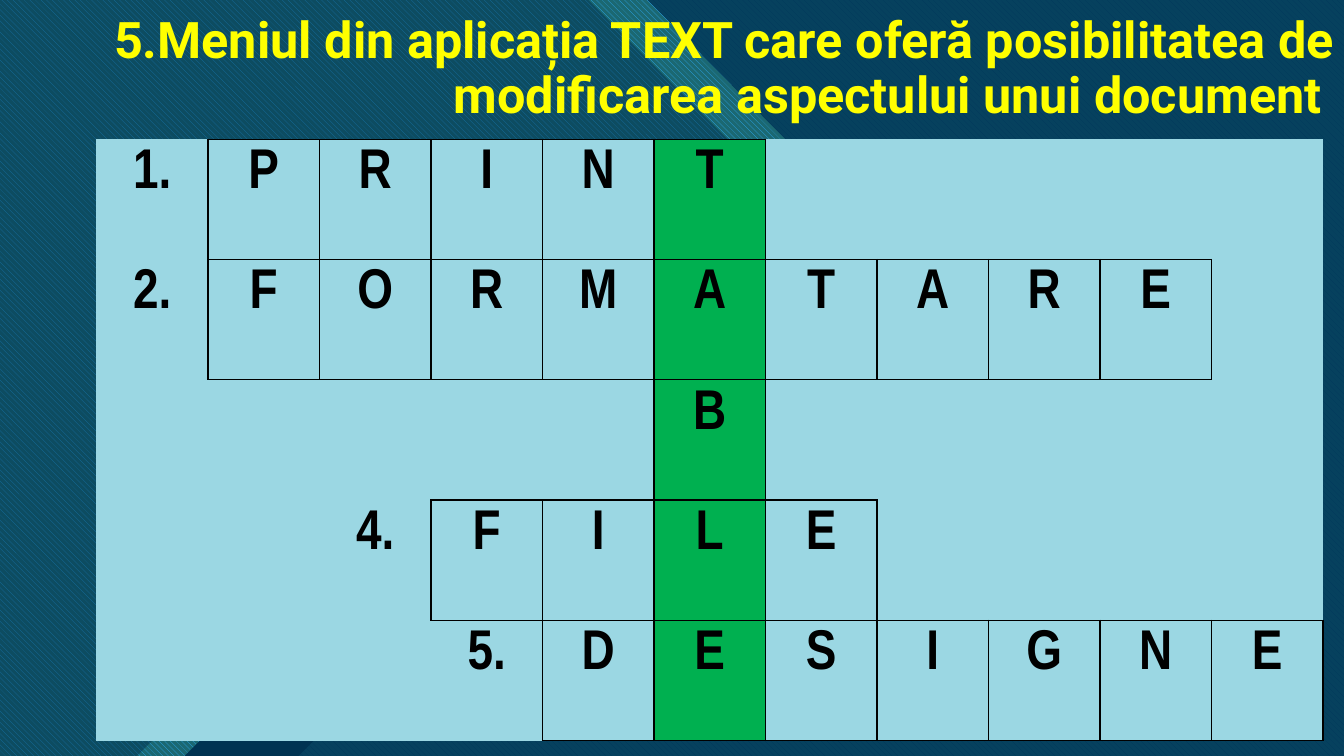
from lxml.etree import SubElement
from pptx import Presentation
from pptx.dml.color import RGBColor
from pptx.enum.dml import MSO_PATTERN as Pat
from pptx.enum.text import MSO_ANCHOR as Anchor, MSO_AUTO_SIZE as Fit, PP_ALIGN as Align
from pptx.oxml.ns import qn
from pptx.util import Cm, Pt

TITLE = "5.Meniul din aplicația TEXT care oferă posibilitatea de modificarea aspectului unui document "
WORDS = [("1.", 0, "PRINT"), ("2.", 0, "FORMATARE"), ("", 4, "B"), ("4.", 2, "FILE"), ("5.", 3, "DESIGNE")]
COLS, KEY = 11, 5
WIDE, HIGH = 33.87, 19.05
LEFT, TOP, COL, ROW = 2.43, 3.51, 2.81, 3.03

BLACK = RGBColor(0x00, 0x00, 0x00)
YELLOW = RGBColor(0xFF, 0xFF, 0x00)
GREEN = RGBColor(0x00, 0xB0, 0x50)
PALE = RGBColor(0x9B, 0xD7, 0xE3)
NAVY = RGBColor(0x00, 0x33, 0x52)
BLUE = RGBColor(0x00, 0x65, 0xA4)
AQUA = RGBColor(0x47, 0xC3, 0xD3)
SKY = RGBColor(0x2F, 0xAF, 0xFF)
TEAL = RGBColor(0x1B, 0x68, 0x72)

FULL = [(0, 0), (WIDE, 0), (WIDE, HIGH), (0, HIGH)]
LAYERS = [
    (FULL, (BLUE, AQUA), 100),
    (FULL, NAVY, 90),
    ([(0.53, 2.29), (16.87, 2.29), (20.57, 5.99), (7.52, HIGH), (0.53, HIGH)], NAVY, 100),
    ([(0, 0), (16.31, 0), (19.99, 3.71), (4.65, HIGH), (0, HIGH)], (SKY, TEAL), 100),
    ([(0, 0), (14.83, 0), (18.67, 3.84), (3.45, HIGH), (0, HIGH)], NAVY, 51),
]


def write(frame, text, size=40, font="Arial Narrow", color=BLACK, align=Align.CENTER, space=1.07):
    """Put one bold formatted paragraph into a text frame."""
    par = frame.paragraphs[0]
    par.alignment, par.line_spacing = align, space
    run = par.add_run()
    run.text = text
    run.font.size, run.font.name, run.font.bold = Pt(size), font, True
    run.font.color.rgb = color


def layer(shapes, points, paint, alpha):
    """Draw one background outline, patterned for a pair of colours."""
    start, *rest = [(Cm(x), Cm(y)) for x, y in points]
    form = shapes.build_freeform(*start)
    form.add_line_segments(rest, close=True)
    shape = form.convert_to_shape()
    shape.shadow.inherit = False
    shape.line.fill.background()
    fill = shape.fill
    if isinstance(paint, RGBColor):
        fill.solid()
        fill.fore_color.rgb = paint
        tint = next(shape.element.spPr.iter(qn("a:srgbClr")))
        SubElement(tint, qn("a:alpha"), val=str(alpha * 1000))
    else:
        fill.patterned()
        fill.pattern = Pat.WIDE_DOWNWARD_DIAGONAL
        fill.fore_color.rgb, fill.back_color.rgb = paint


def border(cell, side, shown):
    """Show or hide one side of a cell."""
    line = SubElement(cell.get_or_add_tcPr(), qn("a:ln" + side), w=str(Pt(1)))
    if shown:
        fill = SubElement(line, qn("a:solidFill"))
        SubElement(fill, qn("a:srgbClr"), val=str(BLACK))
    else:
        SubElement(line, qn("a:noFill"))


def puzzle(shapes):
    """Build the crossword table."""
    rows = len(WORDS)
    table = shapes.add_table(rows, COLS, Cm(LEFT), Cm(TOP), Cm(COL * COLS), Cm(ROW * rows)).table
    table.first_row = table.horz_banding = False
    for col in table.columns:
        col.width = Cm(COL)
    for row in table.rows:
        row.height = Cm(ROW)
    text = {}
    for r, (mark, c, word) in enumerate(WORDS):
        text[r, c] = mark
        text.update({(r, c + i): letter for i, letter in enumerate(word, 1)})
    boxed = {spot for spot, sign in text.items() if sign.isalpha()}
    sides = {"L": (0, -1), "R": (0, 1), "T": (-1, 0), "B": (1, 0)}
    for r in range(rows):
        for c in range(COLS):
            cell = table.cell(r, c)
            for side, (down, over) in sides.items():
                border(cell._tc, side, bool({(r, c), (r + down, c + over)} & boxed))
            cell.fill.solid()
            cell.fill.fore_color.rgb = GREEN if c == KEY else PALE
            cell.margin_left = cell.margin_right = Cm(0.18)
            cell.margin_top = cell.margin_bottom = Cm(0.13)
            if text.get((r, c)):
                write(cell.text_frame, text[r, c])


def main():
    """Build the slide and save it."""
    deck = Presentation()
    deck.slide_width, deck.slide_height = Cm(WIDE), Cm(HIGH)
    shapes = deck.slides.add_slide(deck.slide_layouts[5]).shapes
    for points, paint, alpha in LAYERS:
        layer(shapes, points, paint, alpha)
    puzzle(shapes)
    title = shapes.title
    title.left, title.top, title.width, title.height = Cm(1.02), Cm(0), Cm(32.87), Cm(3.51)
    frame = title.text_frame
    frame.word_wrap, frame.auto_size = True, Fit.NONE
    frame.vertical_anchor = Anchor.MIDDLE
    write(frame, TITLE, size=36, font="Roboto", color=YELLOW, align=Align.RIGHT, space=0.9)
    shapes.element.append(title.element)
    deck.save("out.pptx")


if __name__ == "__main__":
    main()
